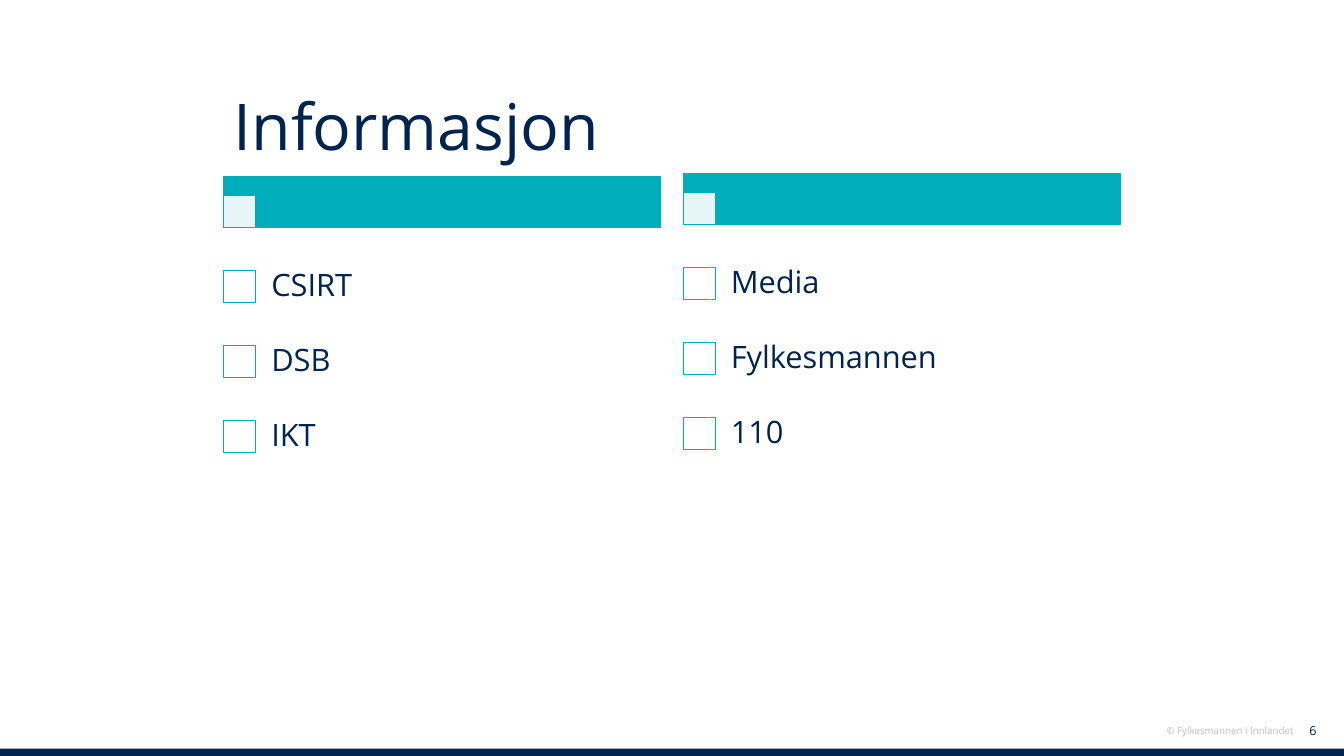
from lxml import etree
from pptx import Presentation
from pptx.dml.color import RGBColor
from pptx.enum import shapes, text
from pptx.oxml.ns import qn
from pptx.util import Pt

NAVY = RGBColor(0x00, 0x24, 0x4E)
TEAL = RGBColor(0x00, 0xAD, 0xBA)
GREY = RGBColor(0xBF, 0xC2, 0xC0)
WHITE = RGBColor(0xFF, 0xFF, 0xFF)

FONT = "Open Sans"
BAR_W, BAR_H = 312, 36.7
BOX = 23
ROW_H = 53.6
COLUMNS = [
    (159.8, 126, ["CSIRT", "DSB", "IKT"]),
    (488, 123.8, ["Media", "Fylkesmannen", "110"]),
]


def add_rect(s, x, y, w, h, fill, line=None, alpha=None):
    """Draw a rectangle; alpha is the opacity of its fill in percent."""
    sp = s.shapes.add_shape(shapes.MSO_SHAPE.RECTANGLE, Pt(x), Pt(y), Pt(w), Pt(h))
    sp.shadow.inherit = False
    sp.fill.solid()
    sp.fill.fore_color.rgb = fill
    if alpha is not None:
        clr = sp._element.spPr.find(qn("a:solidFill"))[0]
        etree.SubElement(clr, qn("a:alpha"), val=str(alpha * 1000))
    if line is None:
        sp.line.fill.background()
    else:
        sp.line.color.rgb = line
        sp.line.width = Pt(0.85)


def add_text(s, x, y, w, h, words, size, color=NAVY, frame=None, para=None):
    """Add a one-line text box; frame and para hold further format values."""
    tf = s.shapes.add_textbox(Pt(x), Pt(y), Pt(w), Pt(h)).text_frame
    p = tf.paragraphs[0]
    r = p.add_run()
    r.text = words
    r.font.color.rgb = color
    formats = [
        (tf, {"word_wrap": True, **(frame or {})}),
        (p, para or {}),
        (r.font, {"name": FONT, "size": Pt(size)}),
    ]
    for target, values in formats:
        for name, value in values.items():
            setattr(target, name, value)


def add_checklist(s, x, y, items):
    add_rect(s, x, y, BAR_W, BAR_H, TEAL, TEAL)
    add_rect(s, x, y + BAR_H - BOX, BOX, BOX, WHITE, TEAL, alpha=90)
    sides = ("left", "top", "right", "bottom")
    frame = {f"margin_{side}": Pt(12) for side in sides}
    frame["vertical_anchor"] = text.MSO_ANCHOR.MIDDLE
    for i, item in enumerate(items):
        top = y + 51.8 + i * ROW_H
        add_rect(s, x, top + 15.2, BOX, BOX, WHITE, TEAL)
        add_text(s, x + 22, top, BAR_W - 22, ROW_H, item, 22,
                 frame=frame, para={"line_spacing": 0.9})


def add_footer(s):
    right = {"alignment": text.PP_ALIGN.RIGHT}
    add_rect(s, 0, 534.7, 960, 5.3, NAVY)
    add_text(s, 908.6, 512.6, 39, 18.7, "6", 9, para=right,
             frame={"vertical_anchor": text.MSO_ANCHOR.MIDDLE})
    add_text(s, 781.2, 514, 149.8, 15.8, "© Fylkesmannen i Innlandet", 7,
             GREY, para=right)


def main():
    prs = Presentation()
    prs.slide_width, prs.slide_height = Pt(960), Pt(540)
    s = prs.slides.add_slide(prs.slide_layouts[6])
    add_footer(s)
    add_text(s, 159.8, 59.8, BAR_W, 66.2, "Informasjon", 46,
             frame={"vertical_anchor": text.MSO_ANCHOR.MIDDLE,
                    "margin_top": Pt(4.3), "margin_bottom": Pt(4.3)},
             para={"line_spacing": 0.9})
    for x, y, items in COLUMNS:
        add_checklist(s, x, y, items)
    prs.save("out.pptx")


if __name__ == "__main__":
    main()
